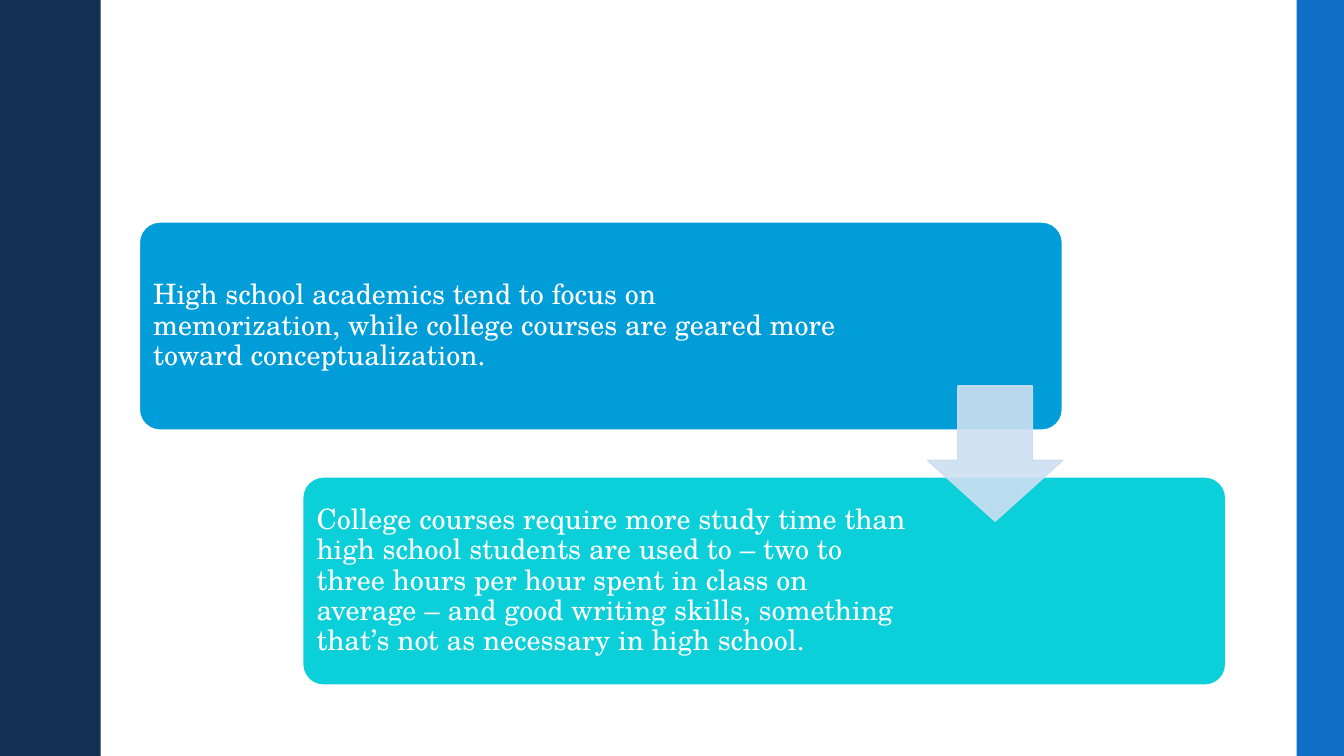
from lxml import etree
from pptx import Presentation
from pptx.dml.color import RGBColor
from pptx.enum.shapes import MSO_SHAPE
from pptx.enum.text import MSO_ANCHOR, PP_ALIGN
from pptx.oxml.ns import qn
from pptx.util import Inches, Pt

RECTANGLE = MSO_SHAPE.RECTANGLE
ROUNDED = MSO_SHAPE.ROUNDED_RECTANGLE
DOWN_ARROW = MSO_SHAPE.DOWN_ARROW
MIDDLE = MSO_ANCHOR.MIDDLE
LEFT = PP_ALIGN.LEFT

FONT = "TeX Gyre Schola"
COLORS = {
    "navy": "113052",
    "royal": "0F6FC6",
    "blue": "009DD9",
    "turquoise": "0BD0D9",
    "pale": "CCDFF1",
    "white": "FFFFFF",
}
SLIDE_WIDTH, SLIDE_HEIGHT = 13.33, 7.5
CARD_WIDTH, CARD_HEIGHT = 9.16, 2.07
TEXT_INSET = 0.06
CARDS = [
    (1.38, 2.2, 7.03, "blue",
     "High school academics tend to focus on memorization, while college "
     "courses are geared more toward conceptualization."),
    (3, 4.73, 6.08, "turquoise",
     "College courses require more study time than high school students are "
     "used to – two to three hours per hour spent in class on average – and "
     "good writing skills, something that’s not as necessary in high school."),
]


def color(name):
    return RGBColor.from_string(COLORS[name])


def add_block(page, kind, bounds, fill, line=None, line_width=0, adjustments=()):
    block = page.shapes.add_shape(kind, *map(Inches, bounds))
    block.shadow.inherit = False
    block.fill.solid()
    block.fill.fore_color.rgb = color(fill)
    if line:
        block.line.color.rgb = color(line)
        block.line.width = Pt(line_width)
    else:
        block.line.fill.background()
    for index, value in enumerate(adjustments):
        block.adjustments[index] = value
    return block


def add_text(page, bounds, text):
    box = page.shapes.add_textbox(*map(Inches, bounds))
    frame = box.text_frame
    frame.word_wrap = True
    frame.vertical_anchor = MIDDLE
    frame.margin_left = frame.margin_right = Inches(0.08)
    frame.margin_top = frame.margin_bottom = Inches(0.08)
    para = frame.paragraphs[0]
    para.alignment = LEFT
    para.line_spacing = 0.9
    span = para.add_run()
    span.text = text
    span.font.name = FONT
    span.font.size = Pt(20)
    span.font.color.rgb = color("white")


def add_card(page, left, top, text_width, fill, text):
    add_block(page, ROUNDED, (left, top, CARD_WIDTH, CARD_HEIGHT), fill,
              "white", 1.35, [0.1])
    add_text(page, (left + TEXT_INSET, top + TEXT_INSET, text_width,
                    CARD_HEIGHT - 2 * TEXT_INSET), text)


def set_opacity(block, percent):
    for tint in block.element.spPr.iter(qn("a:srgbClr")):
        etree.SubElement(tint, qn("a:alpha")).set("val", str(percent * 1000))


def main():
    deck = Presentation()
    deck.slide_width = Inches(SLIDE_WIDTH)
    deck.slide_height = Inches(SLIDE_HEIGHT)
    page = deck.slides.add_slide(deck.slide_layouts[6])
    add_block(page, RECTANGLE, (0, 0, 1, SLIDE_HEIGHT), "navy")
    add_block(page, RECTANGLE, (12.86, 0, SLIDE_WIDTH - 12.86, SLIDE_HEIGHT), "royal")
    for card in CARDS:
        add_card(page, *card)
    arrow = add_block(page, DOWN_ARROW, (9.2, 3.83, 1.34, 1.34), "pale",
                      "pale", 1.1, [0.55, 0.45])
    set_opacity(arrow, 90)
    deck.save("out.pptx")


if __name__ == "__main__":
    main()
